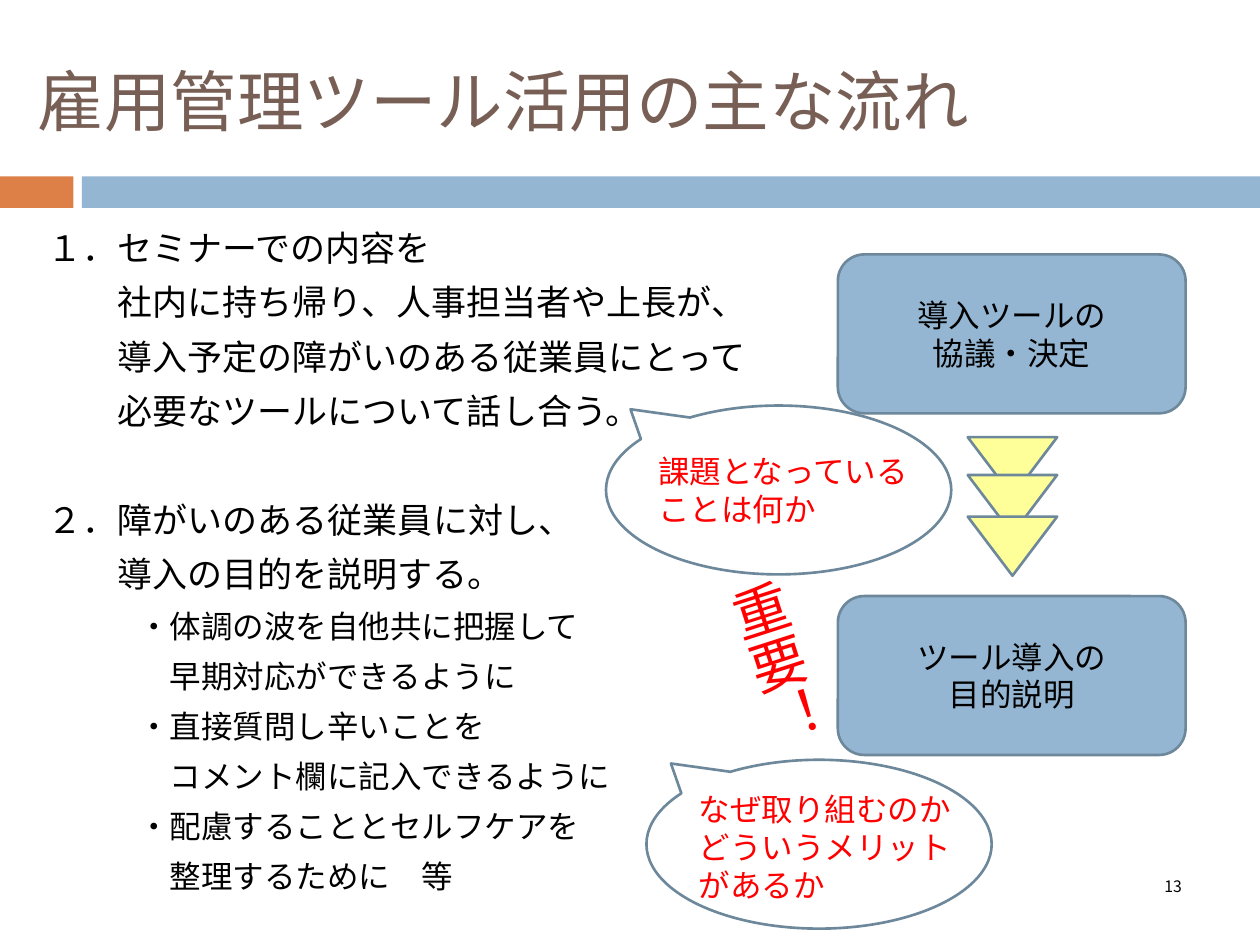
from lxml.etree import SubElement
from pptx import Presentation
from pptx.dml.color import RGBColor
from pptx.enum.shapes import MSO_SHAPE as Kind
from pptx.enum.text import MSO_ANCHOR as Anchor, PP_ALIGN as Align
from pptx.oxml.ns import qn
from pptx.util import Pt

FONT = "Noto Sans CJK JP"
BLUE, EDGE, RED = "94B6D2", "6D879B", "FF0000"
BODY = [
    ("１．セミナーでの内容を", 20, 20, 0),
    ("社内に持ち帰り、人事担当者や上長が、", 20, 60, 7),
    ("導入予定の障がいのある従業員にとって", 20, 60, 7),
    ("必要なツールについて話し合う。", 20, 60, 7),
    ("２．障がいのある従業員に対し、", 20, 20, 38),
    ("導入の目的を説明する。", 20, 60, 7),
    ("・体調の波を自他共に把握して", 18, 72, 7),
    ("早期対応ができるように", 18, 90, 7),
    ("・直接質問し辛いことを", 18, 72, 7),
    ("コメント欄に記入できるように", 18, 90, 7),
    ("・配慮することとセルフケアを", 18, 72, 7),
    ("整理するために　等", 18, 90, 7),
]


def tint(code):
    """Turn a hex string into a colour."""
    return RGBColor.from_string(code)


def put(item, **form):
    """Set each format value on the item."""
    for key, value in form.items():
        setattr(item, key, value)


def draw(slide, kind, box, fill=None, edge=None):
    """Add a preset shape with its fill and line."""
    shape = slide.shapes.add_shape(kind, *map(Pt, box))
    shape.shadow.inherit = False
    if fill:
        shape.fill.solid()
        shape.fill.fore_color.rgb = tint(fill)
    else:
        shape.fill.background()
    if edge:
        shape.line.color.rgb = tint(edge)
        shape.line.width = Pt(1.5)
    else:
        shape.line.fill.background()
    return shape


def write(shape, rows, color="000000", align=Align.LEFT, anchor=Anchor.TOP):
    """Fill a shape with rows of text, size, indent and space before."""
    frame = shape.text_frame
    put(frame, word_wrap=True, vertical_anchor=anchor)
    for num, (text, size, left, gap) in enumerate(rows):
        para = frame.paragraphs[0] if num == 0 else frame.add_paragraph()
        put(para, alignment=align, line_spacing=Pt(size * 1.2), space_before=Pt(gap))
        para._p.get_or_add_pPr().set("marL", str(Pt(left)))
        run = para.add_run()
        run.text = text
        put(run.font, size=Pt(size), name=FONT)
        run.font.color.rgb = tint(color)
        SubElement(run._r.get_or_add_rPr(), qn("a:ea"), typeface=FONT)
    return shape


def note(slide, box, rows, **form):
    """Add a text box."""
    return write(slide.shapes.add_textbox(*map(Pt, box)), rows, **form)


def head(slide, box):
    """Place the title and the two bars below it."""
    x, y, w, h = box
    note(slide, (x + 14.4, y + 18, w - 14.4, 77.8),
         [("雇用管理ツール活用の主な流れ", 38, 0, 0)],
         color="775F55", anchor=Anchor.MIDDLE)
    for left, wide, fill in ((0, 42, "DD8047"), (46.8, w - 46.8, BLUE)):
        draw(slide, Kind.RECTANGLE, (x + left, y + h - 18, wide, 18), fill)


def flow(slide, box):
    """Place two step boxes joined by a stack of triangles."""
    x, y, w, h = box
    high = 90.8
    steps = (("導入ツールの", "協議・決定"), ("ツール導入の", "目的説明"))
    for top, lines in zip((y, y + h - high), steps):
        step = draw(slide, Kind.ROUNDED_RECTANGLE, (x, top, w, high), BLUE, EDGE)
        write(step, [(line, 18, 0, 0) for line in lines],
              align=Align.CENTER, anchor=Anchor.MIDDLE)
    for drop in (104.4, 126, 149.8):
        mark = draw(slide, Kind.ISOSCELES_TRIANGLE,
                    (x + 74.2, y + drop, 51.1, 33.8), "FFFF99", EDGE)
        mark.rotation = 180


def call(slide, box, drop, lines):
    """Place a speech bubble with its red text."""
    x, y, w, h = box
    bubble = draw(slide, Kind.OVAL_CALLOUT, box, edge=EDGE)
    bubble.adjustments[0], bubble.adjustments[1] = -0.429, -0.478
    note(slide, (x + 22.7, y + drop, w - 23, h - 2 * drop),
         [(line, 18, 0, 0) for line in lines], color=RED)


def shout(slide, box):
    """Place the tilted vertical word."""
    word = note(slide, box, [("重要！", 32, 0, 0)], color=RED, align=Align.CENTER)
    word.rotation = 342.2
    put(word.text_frame, margin_top=0, margin_bottom=0)
    word.text_frame._txBody.bodyPr.set("vert", "eaVert")


def main():
    """Build and save the slide."""
    deck = Presentation()
    put(deck, slide_width=Pt(720), slide_height=Pt(540))
    slide = deck.slides.add_slide(deck.slide_layouts[6])
    head(slide, (0, 0, 720, 118.8))
    note(slide, (0, 126, 445, 404.6), BODY)
    note(slide, (649.4, 496.8, 41.8, 19.4), [("13", 9, 0, 0)],
         align=Align.CENTER, anchor=Anchor.MIDDLE)
    flow(slide, (478.8, 145.4, 198.7, 286))
    call(slide, (346.3, 231.8, 197.3, 96.5), 23, ["課題となっていることは何か"])
    call(slide, (369.4, 434.2, 197.3, 96.5), 13.7,
         ["なぜ取り組むのか", "どういうメリットがあるか"])
    shout(slide, (415.4, 332.6, 53.3, 106.6))
    deck.save("out.pptx")


if __name__ == "__main__":
    main()
